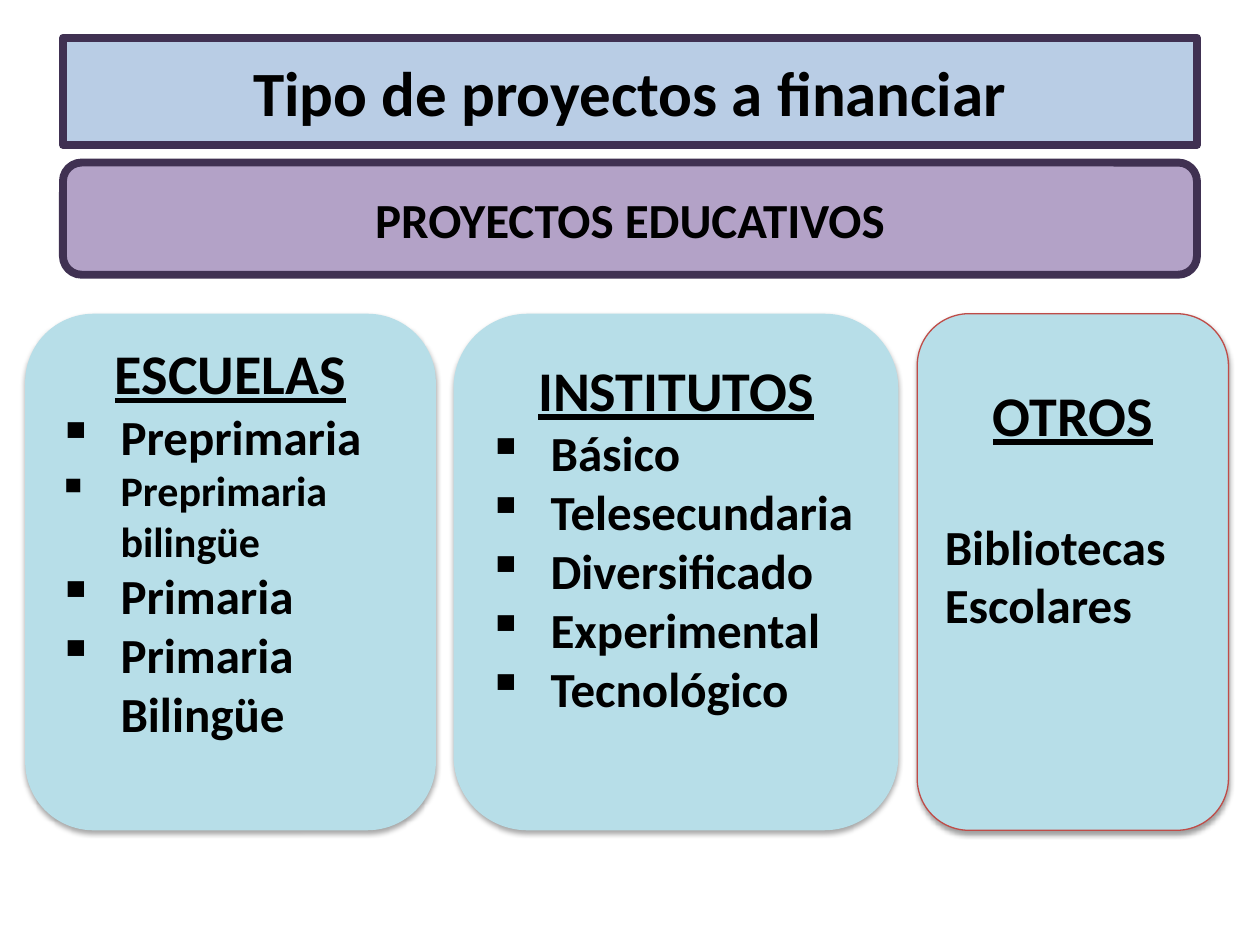
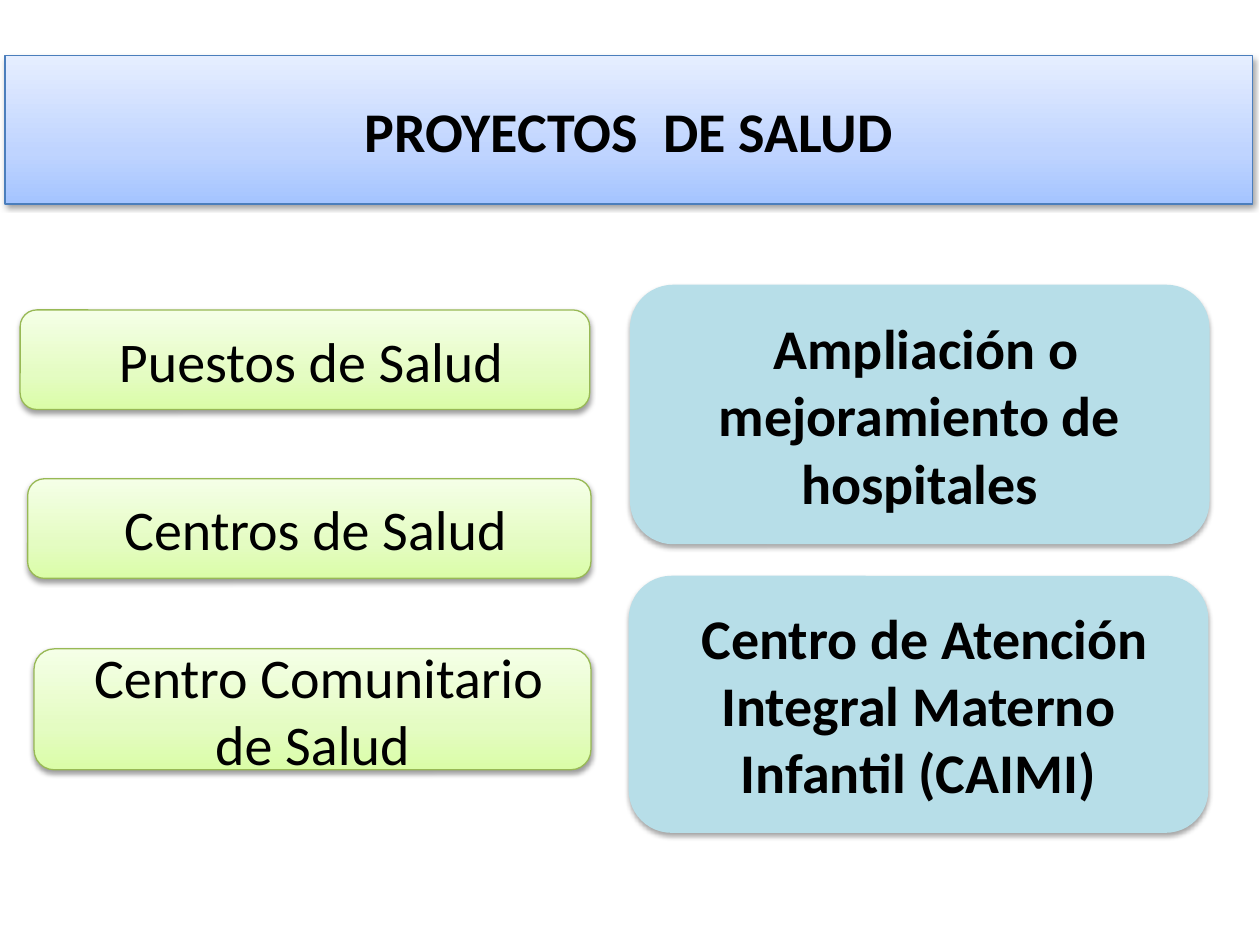
from lxml.etree import SubElement
from pptx import Presentation
from pptx.dml.color import RGBColor
from pptx.enum.shapes import MSO_SHAPE as SHAPE
from pptx.enum.text import MSO_ANCHOR as ANCHOR, MSO_AUTO_SIZE as AUTO, PP_ALIGN as ALIGN
from pptx.oxml.ns import qn
from pptx.util import Inches, Pt

# Shared colours and styles
BLACK, PURPLE, AQUA = "000000", "403152", "B7DEE8"
SOFT = {"alpha": 35, "dist": 1.8}
FIRM = {"alpha": 38, "dist": 1.6}
TITLE = {"fill": "B9CDE5", "line": PURPLE, "width": 4.5}
BAND = {"fill": "B3A2C7", "line": PURPLE, "width": 4.5}
CARD = {"fill": AQUA, "shadow": SOFT}
EDGED_CARD = {"fill": AQUA, "line": "BF4C48", "shadow": FIRM}
GREEN = {"fill": ("DAFDA7", "E4FCC2", "F5FFE7"), "line": "98B955", "shadow": FIRM}
BLUE = {"fill": ("A4C4FF", "BFD4FF", "E6EEFF"), "line": "4B7EBC", "shadow": FIRM}


def style_box(sp, fill, line=None, width=0.75, shadow=None):
    """Fill, outline and shadow; a tuple of three colours runs from bottom to top."""
    if isinstance(fill, tuple):
        sp.fill.gradient()
        sp.fill.gradient_angle = 90
        stops = sp.element.spPr.find(".//" + qn("a:gsLst"))
        for stop in list(stops):
            stops.remove(stop)
        for pos, color in zip((0, 35, 100), fill):
            gs = SubElement(stops, qn("a:gs"), pos=str(pos * 1000))
            SubElement(gs, qn("a:srgbClr"), val=color)
    else:
        sp.fill.solid()
        sp.fill.fore_color.rgb = RGBColor.from_string(fill)
    if line:
        sp.line.color.rgb = RGBColor.from_string(line)
        sp.line.width = Pt(width)
    else:
        sp.line.fill.background()
    sp.shadow.inherit = False
    if shadow:
        effects = sp.element.spPr.find(qn("a:effectLst"))
        outer = SubElement(effects, qn("a:outerShdw"), blurRad=str(Pt(3.1)),
                           dist=str(Pt(shadow["dist"])), dir="5400000", rotWithShape="0")
        color = SubElement(outer, qn("a:srgbClr"), val=BLACK)
        SubElement(color, qn("a:alpha"), val=str(shadow["alpha"] * 1000))


def add_text(sp, text, size, align=ALIGN.CENTER, before=0, bullet=None, **font):
    """Write the first paragraph, or append one to what is there."""
    tf = sp.text_frame
    tf.word_wrap = True
    tf.auto_size = AUTO.NONE
    p = tf.add_paragraph() if tf.text else tf.paragraphs[0]
    p.alignment = align
    p.space_before = Pt(before)
    r = p.add_run()
    r.text = text
    r.font.color.rgb = RGBColor.from_string(BLACK)
    for name, value in {"name": "Calibri", "size": Pt(size), "bold": True, **font}.items():
        setattr(r.font, name, value)
    if bullet:
        pPr = p._p.get_or_add_pPr()
        pPr.set("marL", str(Inches(0.5)))
        pPr.set("indent", str(-Inches(0.5)))
        SubElement(pPr, qn("a:buChar"), char=bullet)


prs = Presentation()
prs.slide_width, prs.slide_height = Inches(10), Inches(7.5)

# Slides and their titles
titles = [
    ("Tipo de proyectos a financiar", 36, "rect", (0.5, 0.3, 9, 0.85), TITLE),
    ("PROYECTOS  DE SALUD", 32, "roundRect", (0.04, 0.44, 9.9, 1.18), BLUE),
]
for text, size, outline, at, look in titles:
    s = prs.slides.add_slide(prs.slide_layouts[5])
    sp = s.shapes.title
    sp.left, sp.top, sp.width, sp.height = map(Inches, at)
    SubElement(sp.element.spPr, qn("a:prstGeom"), prst=outline)
    style_box(sp, **look)
    sp.text_frame.vertical_anchor = ANCHOR.MIDDLE
    add_text(sp, text, size)
education, health = prs.slides

# Education: band under the title
sp = education.shapes.add_shape(SHAPE.ROUNDED_RECTANGLE, *map(Inches, (0.5, 1.29, 9, 0.89)))
style_box(sp, **BAND)
add_text(sp, "PROYECTOS EDUCATIVOS", 28)

# Education: three cards, each a heading over a list of (text, size)
cards = [
    ("ESCUELAS", 0.2, 3.26, 0.04, CARD, "▪", 0,
     [("Preprimaria", 28), ("Preprimaria bilingüe", 24), ("Primaria", 28),
      ("Primaria Bilingüe", 28)]),
    ("INSTITUTOS", 3.6, 3.53, 0.16, CARD, "▪", 0,
     [("Básico", 28), ("Telesecundaria", 28), ("Diversificado", 28),
      ("Experimental", 28), ("Tecnológico", 28)]),
    ("OTROS", 7.28, 2.47, 0.41, EDGED_CARD, None, 39,
     [("Bibliotecas", 28), ("Escolares", 28)]),
]
for heading, left, width, inset, look, bullet, gap, items in cards:
    sp = education.shapes.add_shape(SHAPE.ROUNDED_RECTANGLE,
                                    *map(Inches, (left, 2.49, width, 4.1)))
    style_box(sp, **look)
    sp.text_frame.vertical_anchor = ANCHOR.TOP
    sp.text_frame.margin_top = Inches(inset)
    add_text(sp, heading, 32, underline=True)
    for i, (text, size) in enumerate(items):
        add_text(sp, text, size, ALIGN.JUSTIFY, 0 if i else gap, bullet)

# Health: facilities on the left, larger works on the right
boxes = [
    (" Puestos de Salud", (0.16, 2.46, 4.52, 0.79), GREEN, False),
    (" Centros de Salud", (0.22, 3.8, 4.47, 0.79), GREEN, False),
    (" Centro Comunitario de Salud", (0.27, 5.15, 4.42, 0.96), GREEN, False),
    (" Ampliación o mejoramiento de hospitales", (5, 2.26, 4.6, 2.06), CARD, True),
    (" Centro de Atención Integral Materno Infantil (CAIMI)", (4.99, 4.57, 4.6, 2.04),
     CARD, True),
]
for text, at, look, bold in boxes:
    sp = health.shapes.add_shape(SHAPE.ROUNDED_RECTANGLE, *map(Inches, at))
    style_box(sp, **look)
    add_text(sp, text, 32, bold=bold)

prs.save("out.pptx")
